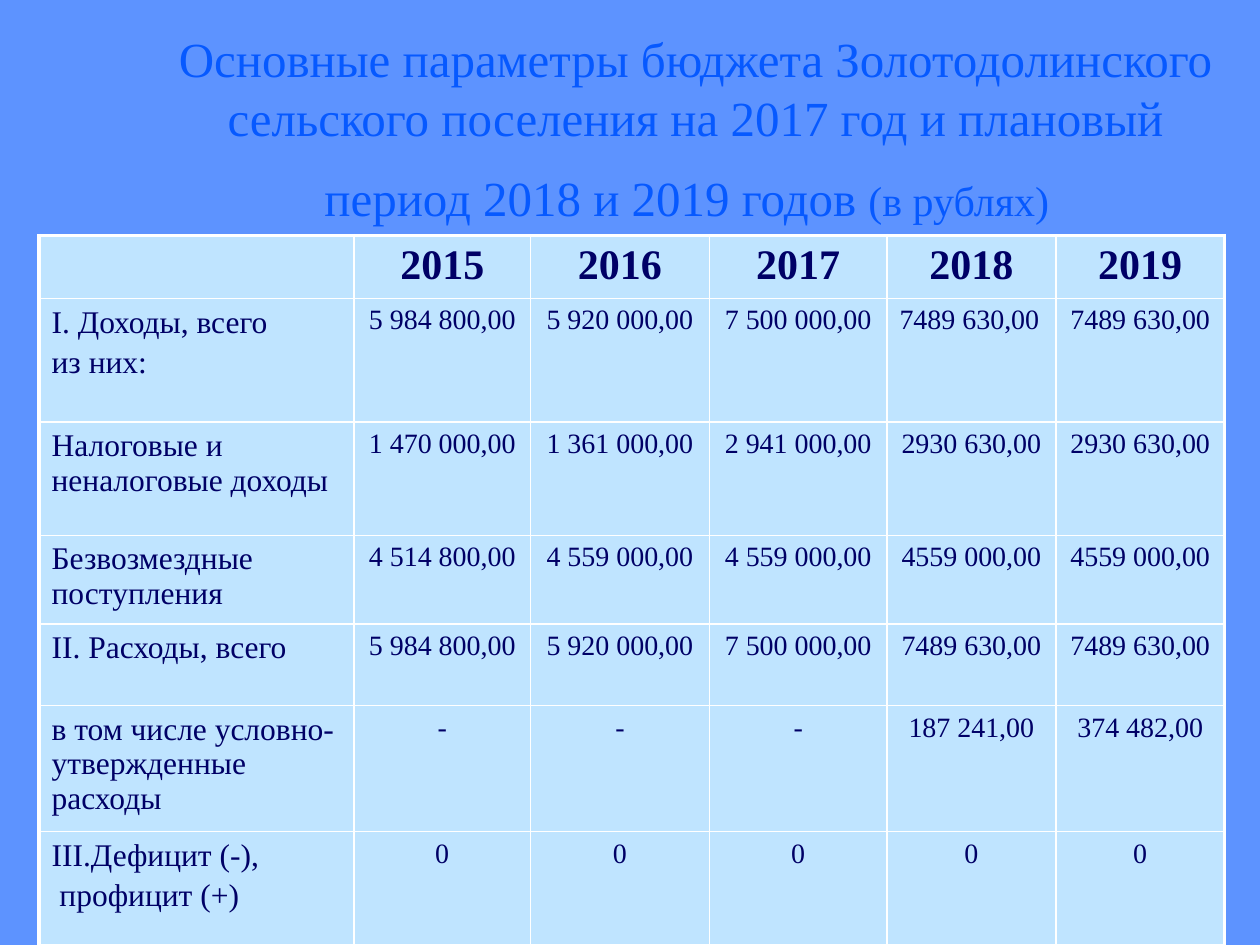
from lxml import etree
from pptx import Presentation
from pptx.dml.color import RGBColor
from pptx.enum.text import MSO_ANCHOR, PP_ALIGN
from pptx.oxml.ns import qn
from pptx.util import Inches, Pt

CENTER, LEFT = PP_ALIGN.CENTER, PP_ALIGN.LEFT
MIDDLE = MSO_ANCHOR.MIDDLE
FONT = "Times New Roman"
COLORS = {"background": "5D93FF", "title": "0659FF", "text": "000066",
          "cell": "BFE4FF", "border": "FFFFFF"}

TITLE_SPANS = [
    ("Основные параметры бюджета Золотодолинского сельского поселения "
     "на 2017 год и плановый период 2018 и 2019 годов ", 28),
    ("(в рублях)", 24),
    (" ", 40),
]
COLUMN_WIDTHS = [2.5, 1.4, 1.42, 1.41, 1.34, 1.34]
ROW_HEIGHTS = [0.5, 0.98, 0.9, 0.65, 0.65, 0.94, 0.9]
BUDGET = [
    ["", "2015", "2016", "2017", "2018", "2019"],
    ["I. Доходы, всего\nиз них:", "5 984 800,00", "5 920 000,00",
     "7 500 000,00", "7489 630,00", "7489 630,00"],
    ["Налоговые и неналоговые доходы", "1 470 000,00", "1 361 000,00",
     "2 941 000,00", "2930 630,00", "2930 630,00"],
    ["Безвозмездные поступления", "4 514 800,00", "4 559 000,00",
     "4 559 000,00", "4559 000,00", "4559 000,00"],
    ["II. Расходы, всего", "5 984 800,00", "5 920 000,00",
     "7 500 000,00", "7489 630,00", "7489 630,00"],
    ["в том числе условно-утвержденные расходы", "-", "-", "-",
     "187 241,00", "374 482,00"],
    ["III.Дефицит (-),\n профицит (+)", "0", "0", "0", "0", "0"],
]
LEFT_ALIGNED_VALUE = (1, 4)


def color(name):
    return RGBColor.from_string(COLORS[name])


def add_title(page):
    box = page.shapes.add_textbox(Inches(1.26), Inches(0.23), Inches(8.52), Inches(1.6))
    frame = box.text_frame
    frame.word_wrap = True
    frame.vertical_anchor = MIDDLE
    para = frame.paragraphs[0]
    para.alignment = CENTER
    para.font.name = FONT
    para.font.color.rgb = color("title")
    for text, size in TITLE_SPANS:
        span = para.add_run()
        span.text = text
        span.font.size = Pt(size)


def set_borders(cell, widths):
    """Draw cell borders; widths maps L, R, T, B (in this order) to points."""
    properties = cell._tc.get_or_add_tcPr()
    for side, width in widths.items():
        line = etree.SubElement(properties, qn(f"a:ln{side}"), w=str(Pt(width)))
        fill = etree.SubElement(line, qn("a:solidFill"))
        etree.SubElement(fill, qn("a:srgbClr"), val=COLORS["border"])


def write_cell(cell, text, size, alignment, bold):
    cell.text = text
    for index, para in enumerate(cell.text_frame.paragraphs):
        para.alignment = alignment
        if index:
            para.space_before = Pt(3)
        para.font.name = FONT
        para.font.size = Pt(size)
        para.font.bold = bold
        para.font.color.rgb = color("text")


def add_budget_table(page):
    table = page.shapes.add_table(
        len(ROW_HEIGHTS), len(COLUMN_WIDTHS), Inches(0.31), Inches(1.87),
        Inches(sum(COLUMN_WIDTHS)), Inches(sum(ROW_HEIGHTS))).table
    for column, width in zip(table.columns, COLUMN_WIDTHS):
        column.width = Inches(width)
    for row, height in zip(table.rows, ROW_HEIGHTS):
        row.height = Inches(height)

    last_column = len(COLUMN_WIDTHS) - 1
    for r, values in enumerate(BUDGET):
        for c, text in enumerate(values):
            cell = table.cell(r, c)
            header = r == 0
            size = 24 if header else 18 if c == 0 else 16
            left = c == 0 or (r, c) == LEFT_ALIGNED_VALUE
            write_cell(cell, text, size, LEFT if left else CENTER, header)
            set_borders(cell, {"L": 2.25 if c == 0 else 1,
                               "R": 2.25 if c == last_column else 1,
                               "T": 2.25 if header else 1,
                               "B": 1})
            cell.fill.solid()
            cell.fill.fore_color.rgb = color("cell")


def main():
    deck = Presentation()
    deck.slide_width, deck.slide_height = Inches(10), Inches(7.5)
    page = deck.slides.add_slide(deck.slide_layouts[6])
    page.background.fill.solid()
    page.background.fill.fore_color.rgb = color("background")
    add_title(page)
    add_budget_table(page)
    deck.save("out.pptx")


if __name__ == "__main__":
    main()
